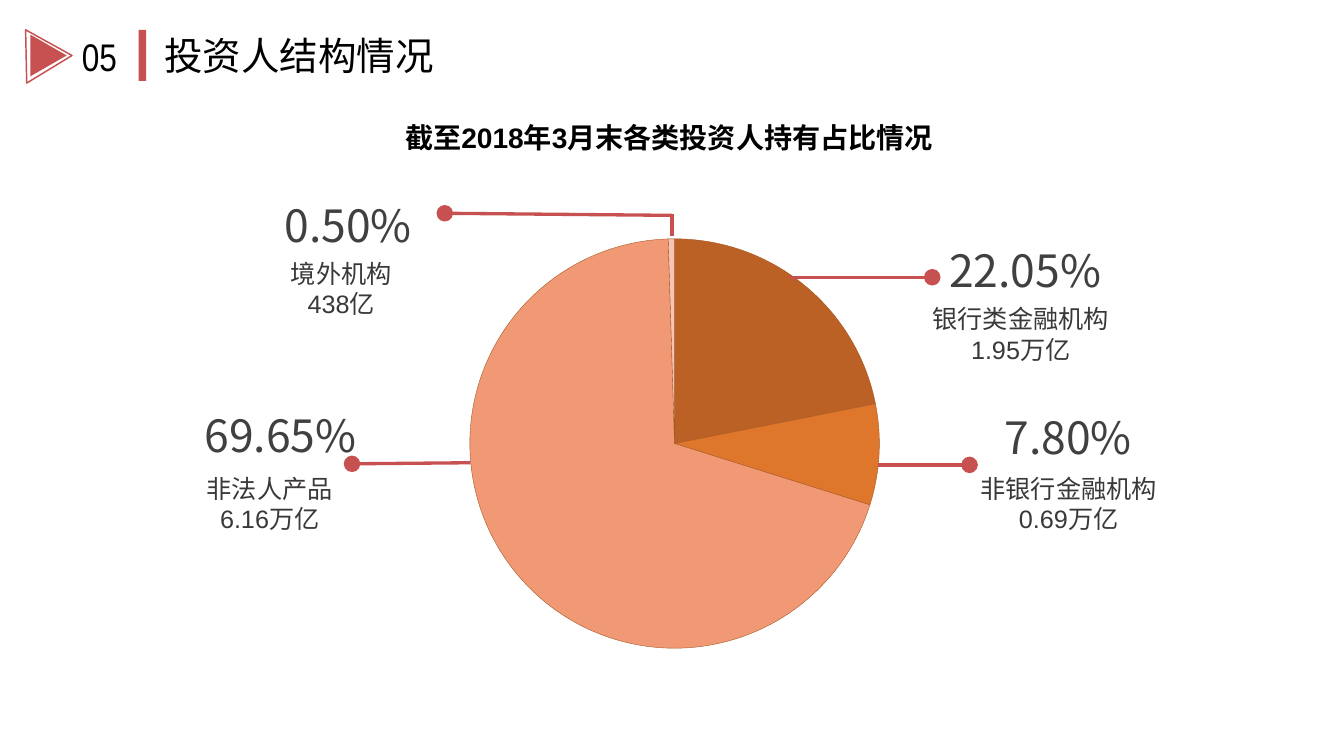
from lxml import etree
from pptx import Presentation
from pptx import util as u
from pptx.chart.data import CategoryChartData
from pptx.dml.color import RGBColor
from pptx.enum import chart as charts, shapes, text
from pptx.oxml import parse_xml
from pptx.oxml.ns import nsdecls, qn

PX = 9144
COLORS = {
    "accent": "C75050", "ink": "000000", "percent": "404040", "detail": "3B3838",
    "bank": "BB6126", "nonbank": "DE762B", "product": "F09974", "foreign": "F6C5B5",
    "border": "A5551F",
}
HAN = "Noto Sans CJK SC"
STYLES = {
    "number": {"size": u.Pt(26), "name": "Arial Narrow", "color": "ink"},
    "heading": {"size": u.Pt(26), "name": HAN, "color": "ink"},
    "subtitle": {"size": u.Pt(19), "name": "Arial", "bold": True, "color": "ink"},
    "percent": {"size": u.Pt(30), "name": HAN, "color": "percent"},
    "detail": {"size": u.Pt(17), "name": "Arial", "color": "detail"},
}
HOLDERS = [
    {"name": "银行类金融机构", "share": 22, "color": "bank",
     "percent": "22.05%", "lines": ["银行类金融机构1.95万亿"],
     "percent_box": (880, 223, 178, 60), "detail_box": (863, 280, 188, 67),
     "leader": (740, 260, 874, 260)},
    {"name": "非银行金融机构", "share": 8, "color": "nonbank",
     "percent": "7.80%", "lines": ["非银行金融机构0.69万亿"],
     "percent_box": (932, 380, 165, 60), "detail_box": (902, 439, 200, 67),
     "leader": (823, 436, 909, 436)},
    {"name": "非法人产品", "share": 70, "color": "product",
     "percent": "69.65%", "lines": ["非法人产品6.16万亿"],
     "percent_box": (182, 378, 178, 60), "detail_box": (163, 439, 180, 67),
     "leader": (441, 434, 330, 435)},
    {"name": "境外机构", "share": 0.5, "color": "foreign",
     "percent": "0.50%", "lines": ["境外机构", "438亿"],
     "percent_box": (257, 181, 178, 60), "detail_box": (230, 237, 180, 67),
     "leader": (630, 202, 417, 200)},
]


def px(*lengths):
    return [u.Emu(length * PX) for length in lengths]


def rgb(color):
    return RGBColor.from_string(COLORS[color])


def add_text(slide, box, lines, style, align=text.PP_ALIGN.LEFT, wrap=False):
    frame = slide.shapes.add_textbox(*px(*box)).text_frame
    frame.word_wrap = wrap
    for index, line in enumerate(lines):
        paragraph = frame.paragraphs[0] if index == 0 else frame.add_paragraph()
        paragraph.alignment = align
        run = paragraph.add_run()
        run.text = line
        for key, value in STYLES[style].items():
            if key == "color":
                run.font.color.rgb = rgb(value)
            else:
                setattr(run.font, key, value)
        latin = run.font._element.find(qn("a:latin"))
        latin.addnext(parse_xml(f'<a:ea {nsdecls("a")} typeface="{HAN}"/>'))


def add_mark(slide, kind, box, rotation=0, filled=True):
    mark = slide.shapes.add_shape(kind, *px(*box))
    mark.shadow.inherit = False
    mark.rotation = rotation
    if filled:
        mark.fill.solid()
        mark.fill.fore_color.rgb = rgb("accent")
        mark.line.fill.background()
    else:
        mark.fill.background()
        mark.line.color.rgb = rgb("accent")
        mark.line.width = u.Pt(1)


def add_leader(slide, ends, dot=True):
    leader = slide.shapes.add_connector(shapes.MSO_CONNECTOR.STRAIGHT, *px(*ends))
    leader.line.color.rgb = rgb("accent")
    leader.line.width = u.Pt(2.25)
    if dot:
        etree.SubElement(leader.line._get_or_add_ln(), qn("a:tailEnd"),
                         type="oval", w="lg", len="lg")
    etree.SubElement(leader._element.spPr, qn("a:effectLst"))


def add_header(slide, left, top):
    triangle = shapes.MSO_SHAPE.ISOSCELES_TRIANGLE
    add_mark(slide, triangle, (left + 4, top + 6, 50, 43), 88.8, False)
    add_mark(slide, triangle, (left + 9, top + 10, 39, 34), 90)
    add_mark(slide, shapes.MSO_SHAPE.RECTANGLE, (left + 113, top + 3, 7, 48))
    add_text(slide, (left + 50, top + 1, 70, 54), ["05"], "number")
    add_text(slide, (left + 127, top, 531, 53), ["投资人结构情况"], "heading")


def add_pie(slide, left, top, width, height, diameter):
    data = CategoryChartData()
    data.categories = [holder["name"] for holder in HOLDERS]
    data.add_series("持有占比", [holder["share"] for holder in HOLDERS])
    chart = slide.shapes.add_chart(
        charts.XL_CHART_TYPE.PIE, *px(left, top, width, height), data).chart
    chart.has_legend = False
    chart.has_title = False
    chart.font.name = "Arial"
    chart.font.size = u.Pt(18)
    chart.font.color.rgb = rgb("ink")
    plot = chart.plots[0]
    plot.vary_by_categories = True
    for index, holder in enumerate(HOLDERS):
        look = plot.series[0].points[index].format
        look.fill.solid()
        look.fill.fore_color.rgb = rgb(holder["color"])
        look.line.color.rgb = rgb("border")
        look.line.width = u.Pt(0.25)
    area = chart._chartSpace.chart.plotArea
    for layout in area.findall(qn("c:layout")):
        area.remove(layout)
    layout = etree.Element(qn("c:layout"))
    area.insert(0, layout)
    manual = etree.SubElement(layout, qn("c:manualLayout"))
    w, h = diameter / width, diameter / height
    settings = {"layoutTarget": "inner", "xMode": "edge", "yMode": "edge",
                "x": (1 - w) / 2, "y": (1 - h) / 2, "w": w, "h": h}
    for key, value in settings.items():
        etree.SubElement(manual, qn(f"c:{key}"), val=str(value))


def add_callout(slide, holder):
    add_leader(slide, holder["leader"])
    add_text(slide, holder["percent_box"], [holder["percent"]], "percent")
    add_text(slide, holder["detail_box"], holder["lines"], "detail",
             text.PP_ALIGN.CENTER, True)


def main():
    deck = Presentation()
    deck.slide_width, deck.slide_height = px(1260, 709)
    slide = deck.slides.add_slide(deck.slide_layouts[6])
    add_pie(slide, 298, 210, 669, 412, 384)
    add_header(slide, 17, 25)
    add_text(slide, (370, 108, 545, 42), ["截至2018年3月末各类投资人持有占比情况"], "subtitle")
    for holder in HOLDERS:
        add_callout(slide, holder)
    add_leader(slide, (630, 201, 630, 221), False)
    deck.save("out.pptx")


if __name__ == "__main__":
    main()
